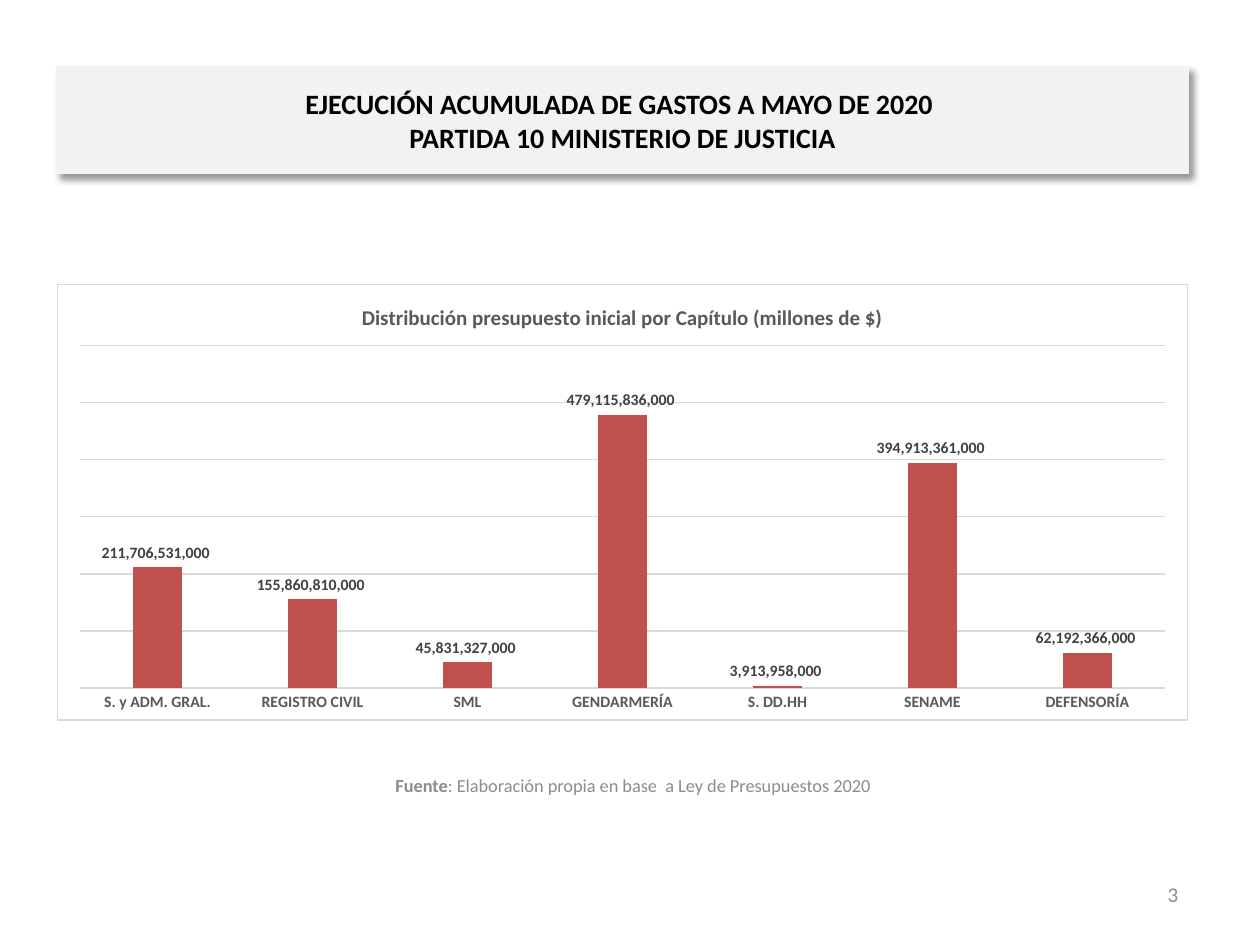
from dataclasses import dataclass

from lxml import etree
from pptx import Presentation
from pptx import util as u
from pptx.chart.data import CategoryChartData
from pptx.dml.color import RGBColor
from pptx.enum import chart as ch
from pptx.enum import text as t
from pptx.oxml import parse_xml
from pptx.oxml.ns import nsdecls, qn

FONT = "Calibri"
BLACK = RGBColor(0, 0, 0)
WHITE = RGBColor(0xFF, 0xFF, 0xFF)
PALE = RGBColor(0xF2, 0xF2, 0xF2)
RULE = RGBColor(0xD9, 0xD9, 0xD9)
GREY = RGBColor(0x8C, 0x8C, 0x8C)
DARK = RGBColor(0x59, 0x59, 0x59)
INK = RGBColor(0x40, 0x40, 0x40)
RED = RGBColor(0xC0, 0x50, 0x4D)
NUMBER = "#,##0_ ;[Red]\\-#,##0\\ "
HEAD = "EJECUCIÓN ACUMULADA DE GASTOS A MAYO DE 2020 \vPARTIDA 10 MINISTERIO DE JUSTICIA"
CAPTION = "Distribución presupuesto inicial por Capítulo (millones de $)"
BUDGET = {
    "S. y ADM. GRAL.": 211706531000,
    "REGISTRO CIVIL": 155860810000,
    "SML": 45831327000,
    "GENDARMERÍA": 479115836000,
    "S. DD.HH": 3913958000,
    "SENAME": 394913361000,
    "DEFENSORÍA": 62192366000,
}


@dataclass
class Box:
    left: float
    top: float
    width: float
    height: float

    def place(self) -> list:
        return [u.Inches(v) for v in (self.left, self.top, self.width, self.height)]


@dataclass
class Note:
    box: Box
    runs: list
    size: float
    align: t.PP_ALIGN


NOTES = [
    Note(Box(7.12, 6.9, 2.33, 0.4), [("3", False)], 12, t.PP_ALIGN.RIGHT),
    Note(
        Box(0.43, 6.03, 9.19, 0.4),
        [("Fuente", True), (": Elaboración propia en base  a Ley de Presupuestos 2020", False)],
        10.5,
        t.PP_ALIGN.CENTER,
    ),
]


def style(font, size: float, color: RGBColor, bold: bool | None = None) -> None:
    font.name, font.size, font.bold = FONT, u.Pt(size), bold
    font.color.rgb = color


def stroke(line, color: RGBColor) -> None:
    line.color.rgb = color
    line.width = u.Pt(0.75)


def add_head(slide, box: Box) -> None:
    head = slide.shapes.title
    head.left, head.top, head.width, head.height = box.place()
    head.fill.solid()
    head.fill.fore_color.rgb = PALE
    stroke(head.line, PALE)
    head._element.spPr.append(parse_xml(
        f'<a:effectLst {nsdecls("a")}><a:outerShdw blurRad="{u.Pt(4)}" dist="{u.Pt(3)}" '
        'dir="2700000" algn="tl" rotWithShape="0"><a:srgbClr val="000000">'
        '<a:alpha val="40000"/></a:srgbClr></a:outerShdw></a:effectLst>'
    ))
    frame = head.text_frame
    frame.text = HEAD
    frame.auto_size = t.MSO_AUTO_SIZE.NONE
    frame.vertical_anchor = t.MSO_ANCHOR.MIDDLE
    para = frame.paragraphs[0]
    para.alignment = t.PP_ALIGN.CENTER
    style(para.font, 16, BLACK, True)


def add_note(slide, note: Note) -> None:
    frame = slide.shapes.add_textbox(*note.box.place()).text_frame
    frame.word_wrap = True
    frame.vertical_anchor = t.MSO_ANCHOR.MIDDLE
    para = frame.paragraphs[0]
    para.alignment = note.align
    style(para.font, note.size, GREY)
    for words, bold in note.runs:
        run = para.add_run()
        run.text = words
        run.font.bold = bold


def add_border(chart) -> None:
    props = parse_xml(
        f'<c:spPr {nsdecls("c", "a")}><a:solidFill><a:srgbClr val="{WHITE}"/></a:solidFill>'
        f'<a:ln w="{u.Pt(0.75)}"><a:solidFill><a:srgbClr val="{RULE}"/></a:solidFill></a:ln></c:spPr>'
    )
    chart._chartSpace.find(qn("c:chart")).addnext(props)


def add_bars(slide, box: Box) -> None:
    data = CategoryChartData(number_format=NUMBER)
    data.categories = list(BUDGET)
    data.add_series("Presupuesto inicial", list(BUDGET.values()))
    kind = ch.XL_CHART_TYPE.COLUMN_CLUSTERED
    chart = slide.shapes.add_chart(kind, *box.place(), data).chart
    style(chart.font, 10, BLACK)
    add_border(chart)
    chart.has_legend = False
    chart.has_title = True
    frame = chart.chart_title.text_frame
    frame.text = CAPTION
    style(frame.paragraphs[0].font, 12, DARK, True)
    chart.chart_title.include_in_layout = False

    names, scale = chart.category_axis, chart.value_axis
    names.major_tick_mark = ch.XL_TICK_MARK.NONE
    style(names.tick_labels.font, 9, DARK, True)
    stroke(names.format.line, RULE)
    scale.minimum_scale, scale.maximum_scale, scale.major_unit = 0, 600e9, 100e9
    scale.visible = False
    scale.has_major_gridlines = True
    stroke(scale.major_gridlines.format.line, RULE)

    plot = chart.plots[0]
    plot.gap_width, plot.overlap, plot.vary_by_categories = 219, -27, False
    fill = plot.series[0].format.fill
    fill.solid()
    fill.fore_color.rgb = RED
    plot.has_data_labels = True
    labels = plot.data_labels
    labels.show_value = True
    labels.number_format, labels.number_format_is_linked = NUMBER, False
    labels.position = ch.XL_LABEL_POSITION.OUTSIDE_END
    style(labels.font, 9, INK, True)


def main() -> None:
    deck = Presentation()
    deck.slide_width, deck.slide_height = u.Inches(10), u.Inches(7.5)
    slide = deck.slides.add_slide(deck.slide_layouts[5])
    add_head(slide, Box(0.45, 0.53, 8.98, 0.85))
    for note in NOTES:
        add_note(slide, note)
    add_bars(slide, Box(0.45, 2.25, 8.98, 3.47))
    deck.save("out.pptx")


if __name__ == "__main__":
    main()
